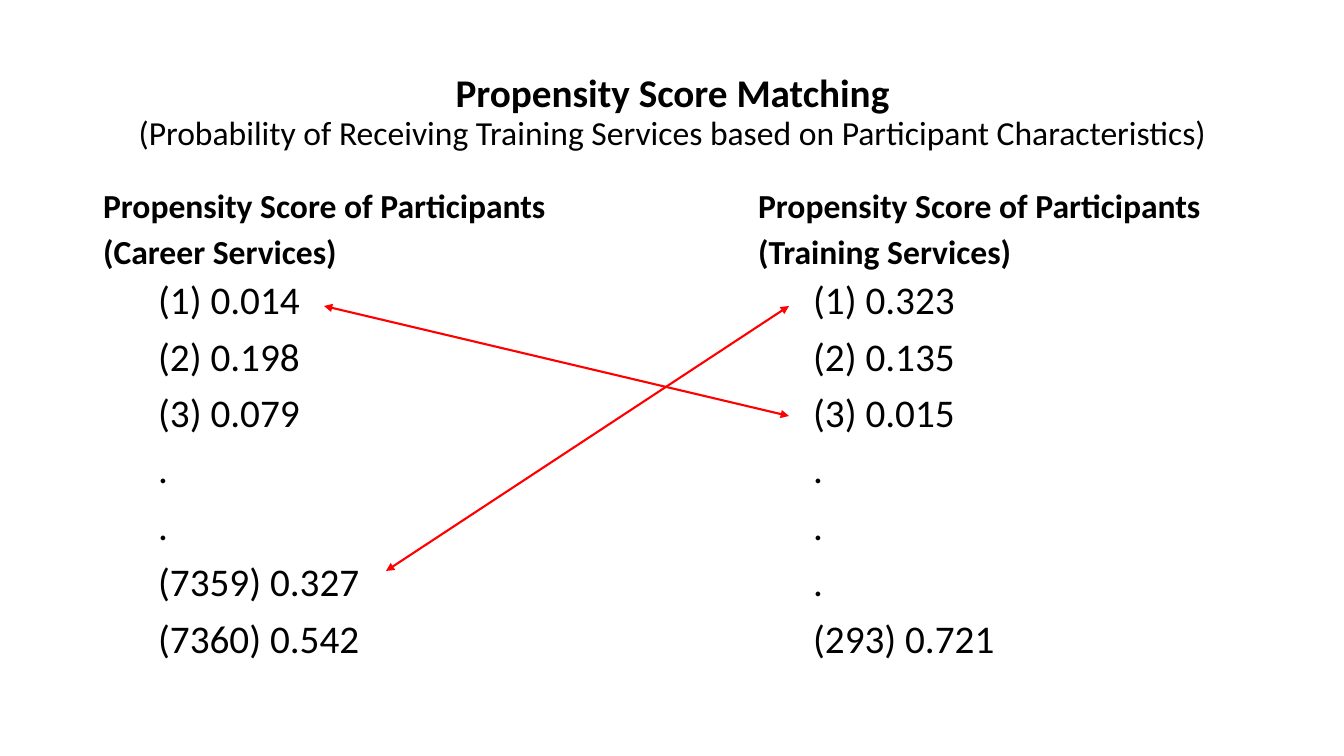
from lxml.etree import SubElement
from pptx import Presentation
from pptx.dml.color import RGBColor
from pptx.enum.shapes import MSO_CONNECTOR
from pptx.enum.text import MSO_ANCHOR, MSO_AUTO_SIZE, PP_ALIGN
from pptx.oxml.ns import qn
from pptx.util import Inches, Pt

BLACK = RGBColor(0x00, 0x00, 0x00)
RED = RGBColor(0xFF, 0x00, 0x00)
FONT = "Calibri"
COMPARISON_LAYOUT = 4

CAREER_SCORES = ["(1) 0.014", "(2) 0.198", "(3) 0.079", ".", ".",
                 "(7359) 0.327", "(7360) 0.542"]
TRAINING_SCORES = ["(1) 0.323", "(2) 0.135", "(3) 0.015", ".", ".", ".",
                   "(293) 0.721"]


def px(length):
    return round(length * Inches(1) / 100.8)


def add_text(paragraph, text, size=28, bold=False, color=BLACK):
    run = paragraph.add_run()
    run.text = text
    run.font.name = FONT
    run.font.size = Pt(size)
    run.font.bold = bold
    run.font.color.rgb = color


def place(placeholder, left, top, width, height, anchor):
    """Move a placeholder and return its text frame, ready to fill."""
    placeholder.left, placeholder.top = px(left), px(top)
    placeholder.width, placeholder.height = px(width), px(height)
    frame = placeholder.text_frame
    frame.word_wrap = True
    frame.auto_size = MSO_AUTO_SIZE.NONE
    frame.vertical_anchor = anchor
    return frame


def fill_title(title):
    frame = place(title, 93, 40, 1159, 146, MSO_ANCHOR.MIDDLE)
    heading = frame.paragraphs[0]
    heading.alignment = PP_ALIGN.CENTER
    heading.line_spacing = 0.9
    add_text(heading, "Propensity Score Matching", bold=True)
    heading.add_line_break()
    add_text(heading, "(Probability of Receiving Training Services based on "
                      "Participant Characteristics)", size=24)


def fill_lines(frame, lines, line_spacing, **text_format):
    """Write one unbulleted, left-aligned paragraph per line."""
    for index, line in enumerate(lines):
        paragraph = frame.add_paragraph() if index else frame.paragraphs[0]
        paragraph.alignment = PP_ALIGN.LEFT
        paragraph.line_spacing = line_spacing
        paragraph.space_before = Pt(10)
        properties = paragraph._p.get_or_add_pPr()
        properties.set("marL", "0")
        properties.set("indent", "0")
        SubElement(properties, qn("a:buNone"))
        add_text(paragraph, line, **text_format)


def fill_group(heading, score_list, left, width, list_width, service, scores):
    heading_frame = place(heading, left, 185, width, 91, MSO_ANCHOR.BOTTOM)
    fill_lines(heading_frame, ["Propensity Score of Participants", f"({service})"],
               0.8, size=24, bold=True)
    list_frame = place(score_list, left + 55, 276, list_width, 406, MSO_ANCHOR.TOP)
    fill_lines(list_frame, scores, 0.9)


def add_match_arrow(slide, start, end):
    """Join two matched scores with a double-headed arrow."""
    arrow = slide.shapes.add_connector(MSO_CONNECTOR.STRAIGHT,
                                       *map(px, start + end))
    arrow.line.color.rgb = RED
    arrow.line.width = Pt(1.5)
    outline = arrow.line._get_or_add_ln()
    for arrowhead in ("a:headEnd", "a:tailEnd"):
        SubElement(outline, qn(arrowhead), type="triangle")
    SubElement(arrow._element.spPr, qn("a:effectLst"))


def main():
    presentation = Presentation()
    presentation.slide_width, presentation.slide_height = px(1344), px(756)
    slide = presentation.slides.add_slide(
        presentation.slide_layouts[COMPARISON_LAYOUT])
    title, career, career_list, training, training_list = slide.placeholders

    fill_title(title)
    fill_group(career, career_list, 93, 569, 379,
               "Career Services", CAREER_SCORES)
    fill_group(training, training_list, 748, 504, 448,
               "Training Services", TRAINING_SCORES)
    add_match_arrow(slide, (324, 306), (789, 416))
    add_match_arrow(slide, (386, 571), (789, 306))
    presentation.save("out.pptx")


if __name__ == "__main__":
    main()
